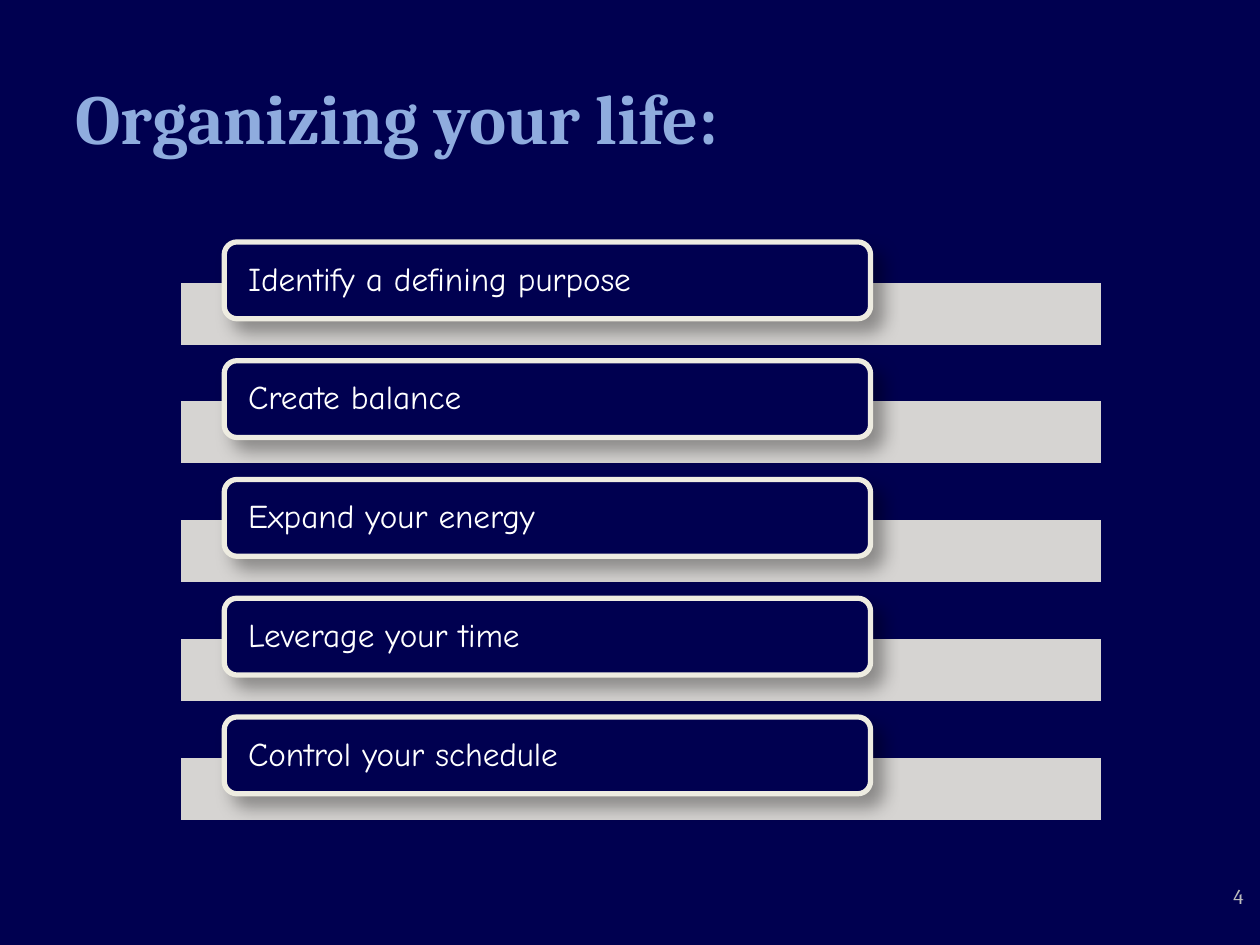
from dataclasses import dataclass

from lxml.etree import SubElement
from pptx import Presentation
from pptx.dml.color import RGBColor
from pptx.enum.shapes import MSO_SHAPE
from pptx.enum.text import MSO_ANCHOR, PP_ALIGN
from pptx.oxml.ns import qn
from pptx.shapes.autoshape import Shape
from pptx.slide import Slide
from pptx.text.text import TextFrame
from pptx.util import Inches, Pt

NAVY = RGBColor(0x00, 0x00, 0x50)
CREAM = RGBColor(0xEE, 0xEC, 0xE1)
SKY = RGBColor(0x8F, 0xAC, 0xDE)
SILVER = RGBColor(0xBD, 0xBD, 0xBD)
WHITE = RGBColor(0xFF, 0xFF, 0xFF)

TITLE_FONT = {"name": "Cambria", "size": Pt(40), "bold": True}
STEP_FONT = {"name": "Comic Neue", "size": Pt(19), "bold": False}
NUMBER_FONT = {"name": "Cambria", "size": Pt(12), "bold": False}

STEPS = (
    "Identify a defining purpose",
    "Create balance",
    "Expand your energy",
    "Leverage your time",
    "Control your schedule",
)
ROW_PITCH = 0.9425


@dataclass(frozen=True)
class Box:
    """Place in inches."""
    left: float
    top: float
    width: float
    height: float

    def in_row(self, row: int) -> "Box":
        return Box(self.left, self.top + row * ROW_PITCH, self.width, self.height)

    def lengths(self) -> tuple[int, ...]:
        return tuple(Inches(v) for v in (self.left, self.top, self.width, self.height))


TITLE_BOX = Box(0.5, 0.3, 9, 1.25)
BAND_BOX = Box(1.42, 2.23, 7.33, 0.52)
LABEL_BOX = Box(1.78, 1.92, 5.13, 0.61)
NUMBER_BOX = Box(9.2, 6.76, 0.67, 0.5)


def write(frame: TextFrame, text: str, font: dict, color: RGBColor,
          align: PP_ALIGN, anchor: MSO_ANCHOR) -> None:
    frame.word_wrap = True
    frame.vertical_anchor = anchor
    paragraph = frame.paragraphs[0]
    paragraph.alignment = align
    run = paragraph.add_run()
    run.text = text
    for attribute, value in font.items():
        setattr(run.font, attribute, value)
    run.font.color.rgb = color


def set_insets(frame: TextFrame, side: float, end: float) -> None:
    for edge, inset in {"left": side, "right": side, "top": end, "bottom": end}.items():
        setattr(frame, f"margin_{edge}", Inches(inset))


def add_panel(slide: Slide, kind: MSO_SHAPE, box: Box, fill: RGBColor,
              line: RGBColor, line_width: float) -> Shape:
    panel = slide.shapes.add_shape(kind, *box.lengths())
    panel.shadow.inherit = False
    panel.fill.solid()
    panel.fill.fore_color.rgb = fill
    panel.line.color.rgb = line
    panel.line.width = Pt(line_width)
    return panel


def set_band_opacity(band: Shape, percent: int) -> None:
    color = band.fill._xPr.find(f"{qn('a:solidFill')}/{qn('a:srgbClr')}")
    SubElement(color, qn("a:alpha"), val=str(percent * 1000))


def cast_shadow(label: Shape) -> None:
    """Soft black shadow toward the lower right."""
    effects = label.element.spPr.find(qn("a:effectLst"))
    shadow = SubElement(effects, qn("a:outerShdw"), blurRad=str(Pt(10.2)),
                        dist=str(Pt(8)), dir=str(45 * 60000),
                        algn="tl", rotWithShape="0")
    color = SubElement(shadow, qn("a:srgbClr"), val="000000")
    SubElement(color, qn("a:alpha"), val="35000")


def add_step(slide: Slide, row: int, step: str) -> None:
    band = add_panel(slide, MSO_SHAPE.RECTANGLE, BAND_BOX.in_row(row), CREAM, NAVY, 2)
    set_band_opacity(band, 90)
    label = add_panel(slide, MSO_SHAPE.ROUNDED_RECTANGLE, LABEL_BOX.in_row(row),
                      NAVY, CREAM, 3)
    cast_shadow(label)
    # The rounded corners add about 0.03 inch to the side inset.
    set_insets(label.text_frame, side=0.16, end=0)
    write(label.text_frame, step, STEP_FONT, WHITE, PP_ALIGN.LEFT, MSO_ANCHOR.MIDDLE)
    label.text_frame.paragraphs[0].line_spacing = 0.9


def main() -> None:
    deck = Presentation()
    deck.slide_width, deck.slide_height = Inches(10), Inches(7.5)
    slide = deck.slides.add_slide(deck.slide_layouts.get_by_name("Title Only"))
    slide.background.fill.solid()
    slide.background.fill.fore_color.rgb = NAVY

    title = slide.shapes.title
    title.left, title.top, title.width, title.height = TITLE_BOX.lengths()
    write(title.text_frame, "Organizing your life:", TITLE_FONT, SKY,
          PP_ALIGN.LEFT, MSO_ANCHOR.MIDDLE)

    for row, step in enumerate(STEPS):
        add_step(slide, row, step)

    page_number = slide.shapes.add_textbox(*NUMBER_BOX.lengths()).text_frame
    set_insets(page_number, side=0, end=0.05)
    write(page_number, "4", NUMBER_FONT, SILVER, PP_ALIGN.RIGHT, MSO_ANCHOR.BOTTOM)

    deck.save("out.pptx")


if __name__ == "__main__":
    main()
